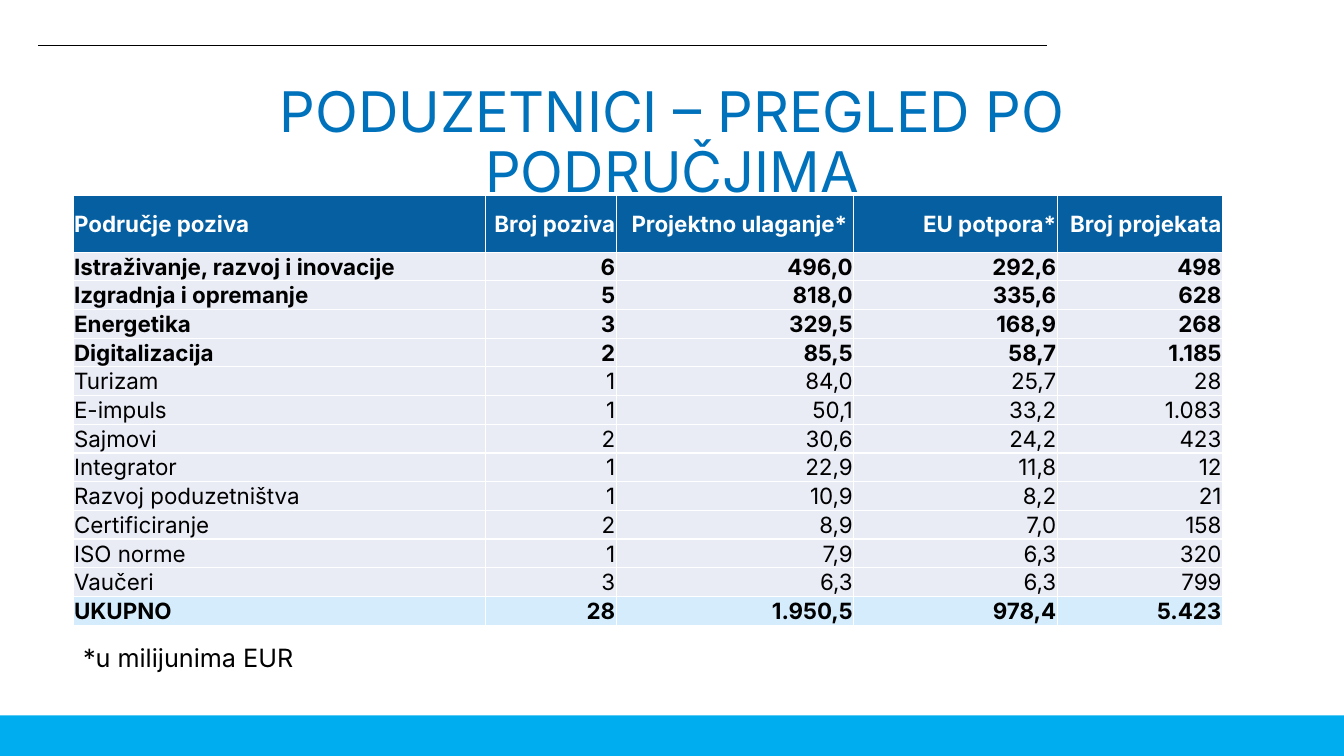
from pptx import Presentation
from pptx.dml.color import RGBColor
from pptx.enum import shapes, text
from pptx.oxml import ns
from pptx.util import Pt
from lxml import etree

WHITE = RGBColor(0xFF, 0xFF, 0xFF)
BLACK = RGBColor(0, 0, 0)
CYAN = RGBColor(0x00, 0xAE, 0xEF)
BLUE = RGBColor(0x00, 0x72, 0xBC)
NAVY = RGBColor(0x05, 0x5F, 0xA0)
PALE = RGBColor(0xE9, 0xEB, 0xF5)
SKY = RGBColor(0xD4, 0xEC, 0xFC)

WIDTHS = [294.3, 93.6, 169.7, 145.4, 118]
HEAD, ROW = 40.3, 20.5
BOLD_ROWS = 4
HEADER = ["Područje poziva", "Broj poziva", "Projektno ulaganje* ",
          "EU potpora*", "Broj projekata"]
AREAS = [
    ["Istraživanje, razvoj i inovacije", "6", "496,0", "292,6", "498"],
    ["Izgradnja i opremanje", "5", "818,0", "335,6", "628"],
    ["Energetika", "3", "329,5", "168,9", "268"],
    ["Digitalizacija", "2", "85,5", "58,7", "1.185"],
    ["Turizam", "1", "84,0", "25,7", "28"],
    ["E-impuls", "1", "50,1", "33,2", "1.083"],
    ["Sajmovi", "2", "30,6", "24,2", "423"],
    ["Integrator", "1", "22,9", "11,8", "12"],
    ["Razvoj poduzetništva", "1", "10,9", "8,2", "21"],
    ["Certificiranje", "2", "8,9", "7,0", "158"],
    ["ISO norme", "1", "7,9", "6,3", "320"],
    ["Vaučeri", "3", "6,3", "6,3", "799"],
]
TOTAL = ["UKUPNO", "28", "1.950,5", "978,4", "5.423"]


class Deck:
    font = "Inter"

    def __init__(self, wide, high):
        self.prs = Presentation()
        self.prs.slide_width, self.prs.slide_height = Pt(wide), Pt(high)
        self.slide = self.prs.slides.add_slide(self.prs.slide_layouts[5])

    def label(self, frame, words, size, color, bold=False,
              align=text.PP_ALIGN.LEFT):
        frame.text = words
        para = frame.paragraphs[0]
        para.alignment = align
        for run in para.runs:
            font = run.font
            font.name, font.size, font.bold = self.font, Pt(size), bold
            font.color.rgb = color
        return para

    def title(self, words, x, y, w, h):
        box = self.slide.shapes.title
        box.left, box.top, box.width, box.height = map(Pt, (x, y, w, h))
        frame = box.text_frame
        frame.word_wrap = True
        frame.auto_size = text.MSO_AUTO_SIZE.NONE
        frame.vertical_anchor = text.MSO_ANCHOR.MIDDLE
        para = self.label(frame, words, 40, BLUE, align=text.PP_ALIGN.CENTER)
        para.line_spacing = 0.9

    def band(self, x, y, w, h, color):
        bar = self.slide.shapes.add_shape(
            shapes.MSO_SHAPE.RECTANGLE, *map(Pt, (x, y, w, h)))
        bar.shadow.inherit = False
        bar.fill.solid()
        bar.fill.fore_color.rgb = color
        bar.line.fill.background()

    def rule(self, x, y, end):
        line = self.slide.shapes.add_connector(
            shapes.MSO_CONNECTOR.STRAIGHT, *map(Pt, (x, y, end, y)))
        line.line.color.rgb = BLACK
        line.line.width = Pt(0.5)
        etree.SubElement(line._element.spPr, ns.qn("a:effectLst"))

    def note(self, words, x, y, w, h):
        box = self.slide.shapes.add_textbox(*map(Pt, (x, y, w, h)))
        box.text_frame.word_wrap = True
        self.label(box.text_frame, words, 18, BLACK)

    def border(self, cell):
        props = cell._tc.get_or_add_tcPr()
        for side in ("lnL", "lnR", "lnT", "lnB"):
            line = etree.SubElement(props, ns.qn("a:" + side), w=str(Pt(1)))
            fill = etree.SubElement(line, ns.qn("a:solidFill"))
            etree.SubElement(fill, ns.qn("a:srgbClr"), val=str(WHITE))

    def cell(self, cell, words, fill, color, bold, align):
        cell.margin_left = cell.margin_right = cell.margin_top = Pt(0.72)
        cell.margin_bottom = 0
        cell.vertical_anchor = text.MSO_ANCHOR.MIDDLE
        self.border(cell)
        cell.fill.solid()
        cell.fill.fore_color.rgb = fill
        self.label(cell.text_frame, words, 16, color, bold, align)

    def table(self, x, y):
        rows = [HEADER, *AREAS, TOTAL]
        last = len(rows) - 1
        high = HEAD + ROW * last
        grid = self.slide.shapes.add_table(
            len(rows), len(WIDTHS), *map(Pt, (x, y, sum(WIDTHS), high))).table
        for col, wide in zip(grid.columns, WIDTHS):
            col.width = Pt(wide)
        for r, row in enumerate(rows):
            grid.rows[r].height = Pt(ROW if r else HEAD)
            fill = {0: NAVY, last: SKY}.get(r, PALE)
            color = BLACK if r else WHITE
            bold = r <= BOLD_ROWS or r == last
            for c, words in enumerate(row):
                align = text.PP_ALIGN.RIGHT if c else text.PP_ALIGN.LEFT
                self.cell(grid.cell(r, c), words, fill, color, bold, align)


def main():
    deck = Deck(960, 540)
    deck.band(0, 511, 960, 29, CYAN)
    deck.rule(27.2, 32.2, 748)
    deck.title("PODUZETNICI – PREGLED PO PODRUČJIMA", 114.3, 56, 731.4, 94.3)
    deck.table(52.2, 139.8)
    deck.note("*u milijunima EUR", 52.2, 455, 223, 29)
    deck.prs.save("out.pptx")


if __name__ == "__main__":
    main()
